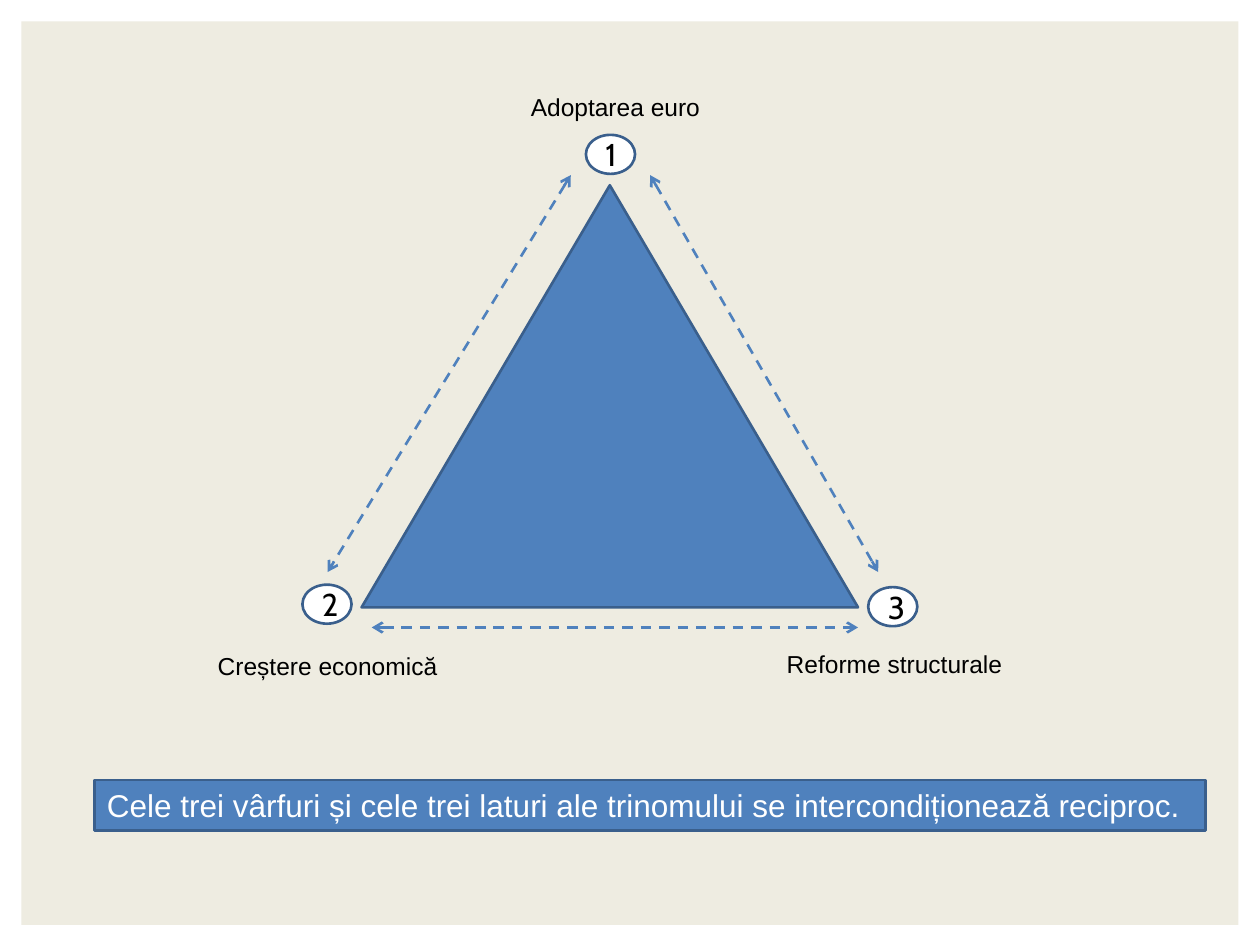
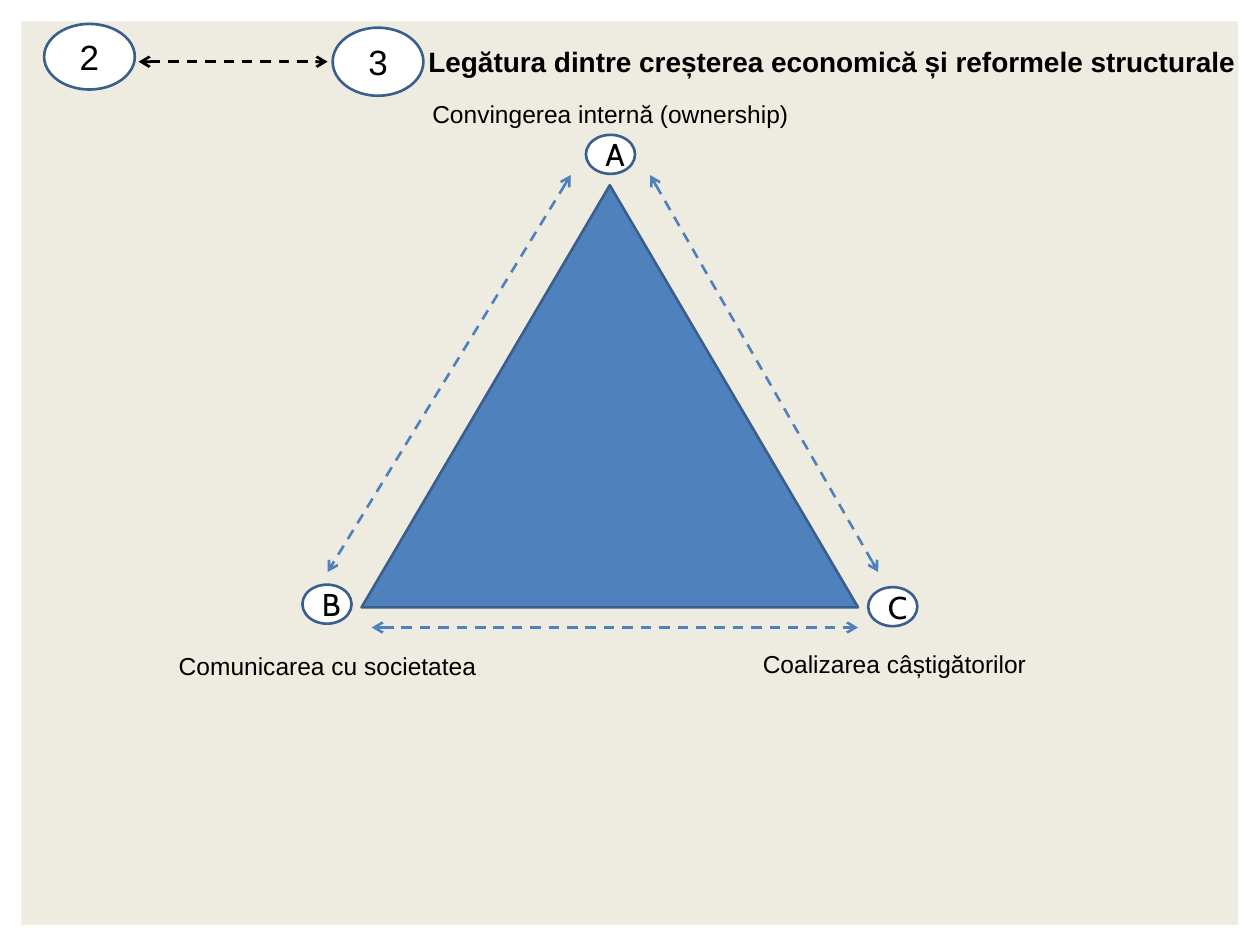
from lxml import etree
from pptx import Presentation
from pptx.dml.color import RGBColor
from pptx.enum import dml, shapes, text
from pptx.oxml import ns
from pptx.util import Inches, Pt

BLUE, EDGE, SAND, BLACK, WHITE = "4F81BD", "3A5F8C", "EEECE1", "000000", "FFFFFF"
KIND = shapes.MSO_SHAPE
MID, TOP = text.MSO_ANCHOR.MIDDLE, text.MSO_ANCHOR.TOP
LEFT, CENTER = text.PP_ALIGN.LEFT, text.PP_ALIGN.CENTER

# Each corner: mark, label, label box
EURO = [
    ("1", "Adoptarea euro", (4.02, 0.68, 1.73, 0.34)),
    ("2", "Creștere economică", (1.26, 5.12, 2.68, 0.34)),
    ("3", "Reforme structurale", (5.76, 5.1, 2.68, 0.34)),
]
REFORM = [
    ("A", "Convingerea internă (ownership)", (3.25, 0.74, 3.19, 0.34)),
    ("B", "Comunicarea cu societatea", (1.26, 5.12, 2.68, 0.34)),
    ("C", "Coalizarea câștigătorilor", (5.76, 5.1, 2.68, 0.34)),
]
NOTE = "Cele trei vârfuri și cele trei laturi ale trinomului se intercondiționează reciproc."
TITLE = "Legătura dintre creșterea economică și reformele structurale"
LINKED = [("2", (0.35, 0.19, 0.72, 0.52)), ("3", (2.64, 0.22, 0.72, 0.54))]

TRIANGLE = (2.87, 1.47, 3.94, 3.35)
SPOTS = [(4.65, 1.07), (2.4, 4.64), (6.89, 4.66)]
SPOT_SIZE = (0.39, 0.31)
SIDES = [
    ((4.53, 1.39), (2.6, 4.54)),
    ((5.16, 1.39), (6.97, 4.54)),
    ((2.95, 4.98), (6.81, 4.98)),
]


def color(code):
    return RGBColor.from_string(code)


def place(shape, box):
    shape.left, shape.top, shape.width, shape.height = map(Inches, box)


def write(shape, words, size, ink=BLACK, font="Arial", bold=False,
          align=CENTER, anchor=TOP):
    frame = shape.text_frame
    frame.text = words
    frame.word_wrap = True
    frame.auto_size = text.MSO_AUTO_SIZE.NONE
    frame.vertical_anchor = anchor
    para = frame.paragraphs[0]
    para.alignment = align
    face = para.runs[0].font
    face.name, face.size, face.bold = font, Pt(size), bold
    face.color.rgb = color(ink)


def add_block(slide, kind, box, fill, edge=EDGE):
    block = slide.shapes.add_shape(kind, *map(Inches, box))
    block.shadow.inherit = False
    block.fill.solid()
    block.fill.fore_color.rgb = color(fill)
    if edge:
        block.line.color.rgb = color(edge)
        block.line.width = Pt(1.5)
    else:
        block.line.fill.background()
    return block


def add_mark(slide, mark, box, size, font):
    oval = add_block(slide, KIND.FLOWCHART_CONNECTOR, box, WHITE)
    write(oval, mark, size, font=font, anchor=MID)


def add_arrow(slide, start, end, ink=BLUE):
    """Add a dashed line with an open arrowhead at both ends."""
    arrow = slide.shapes.add_connector(
        shapes.MSO_CONNECTOR.STRAIGHT, *map(Inches, start + end))
    arrow.line.color.rgb = color(ink)
    arrow.line.width = Pt(1.5)
    arrow.line.dash_style = dml.MSO_LINE.DASH
    props = arrow.element.spPr
    line = props.find(ns.qn("a:ln"))
    for tip in ("a:headEnd", "a:tailEnd"):
        etree.SubElement(line, ns.qn(tip), type="arrow")
    etree.SubElement(props, ns.qn("a:effectLst"))


def add_trio(slide, corners):
    """Draw the triangle with its marks, arrows and labels."""
    add_block(slide, KIND.FLOWCHART_EXTRACT, TRIANGLE, BLUE)
    for (mark, label, box), spot in zip(corners, SPOTS):
        add_mark(slide, mark, spot + SPOT_SIZE, 18, "Cabin")
        write(slide.shapes.add_textbox(*map(Inches, box)), label, 14)
    for start, end in SIDES:
        add_arrow(slide, start, end)


def add_panel(deck, slide):
    """Draw the sand panel and move it to the master, behind all else."""
    panel = add_block(slide, KIND.RECTANGLE, (0.17, 0.17, 9.66, 7.17), SAND, None)
    panel.element.xpath("./p:nvSpPr/p:cNvPr")[0].set("id", "99")
    deck.slide_master.shapes.element.insert(2, panel.element)


def main():
    deck = Presentation()
    deck.slide_width, deck.slide_height = Inches(10), Inches(7.5)
    titled, blank = deck.slide_layouts[5], deck.slide_layouts[6]

    euro = deck.slides.add_slide(blank)
    add_panel(deck, euro)
    add_trio(euro, EURO)
    note = add_block(euro, KIND.RECTANGLE, (0.75, 6.19, 8.82, 0.4), BLUE)
    write(note, NOTE, 18, WHITE, align=LEFT)

    reform = deck.slides.add_slide(titled)
    title = reform.shapes.title
    place(title, (3.3, 0.3, 6.73, 0.37))
    write(title, TITLE, 16, bold=True, align=LEFT)
    add_trio(reform, REFORM)
    for mark, box in LINKED:
        add_mark(reform, mark, box, 20, "Arial")
    add_arrow(reform, (1.1, 0.49), (2.6, 0.49), BLACK)

    deck.save("out.pptx")


if __name__ == "__main__":
    main()
